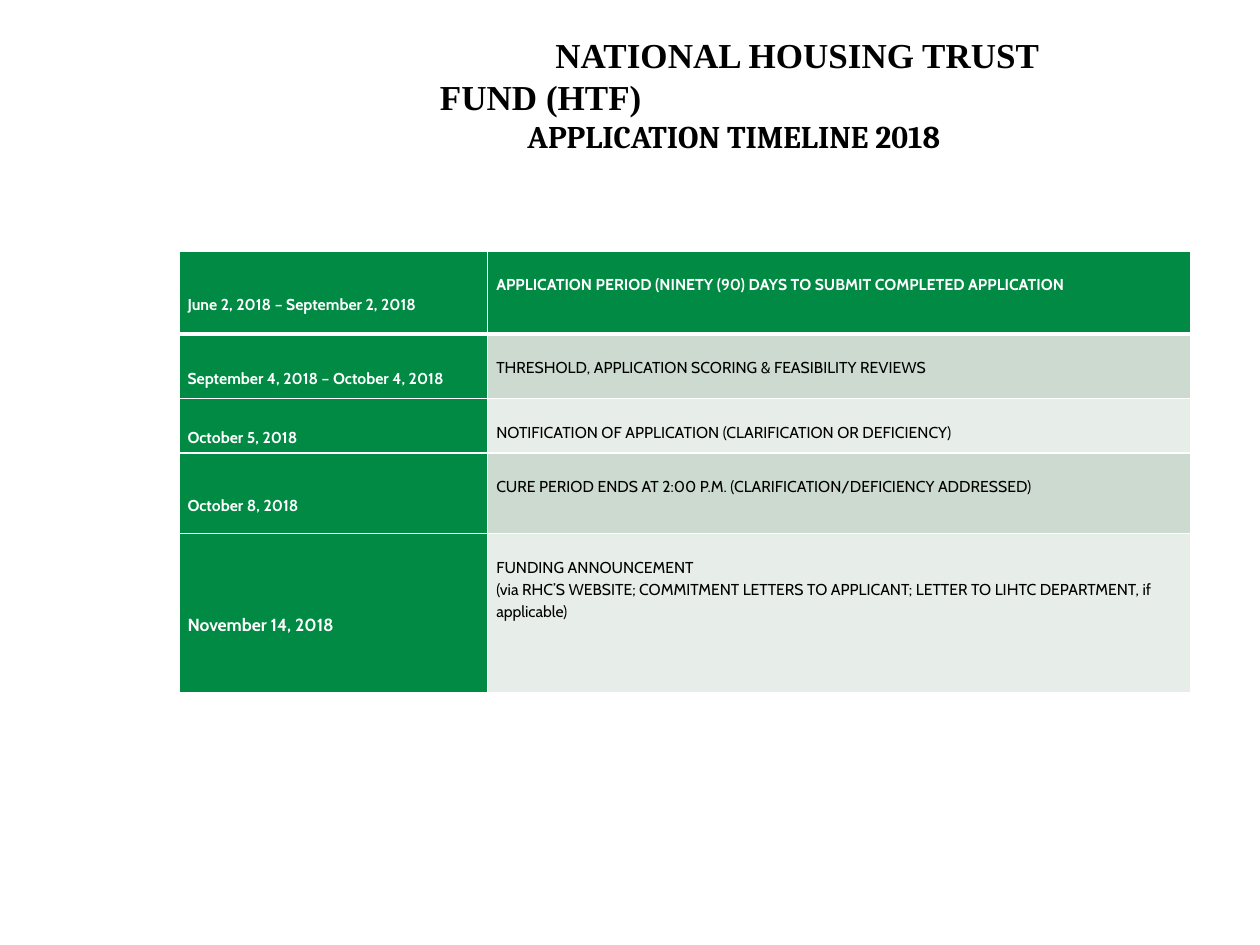
import pptx
import pptx.dml.color
import pptx.enum.text
import pptx.oxml
import pptx.oxml.ns
import pptx.util

Pt = pptx.util.Pt
RGBColor = pptx.dml.color.RGBColor
ALIGN = pptx.enum.text.PP_ALIGN
ANCHOR = pptx.enum.text.MSO_ANCHOR

GREEN = RGBColor(0x00, 0x8A, 0x43)
SAGE = RGBColor(0xCC, 0xDA, 0xCF)
MIST = RGBColor(0xE7, 0xED, 0xE9)
WHITE = RGBColor(0xFF, 0xFF, 0xFF)
BLACK = RGBColor(0x00, 0x00, 0x00)


def set_attributes(target, values):
    for name, value in values.items():
        setattr(target, name, value)


def add_border(cell, side, width):
    cell._tc.get_or_add_tcPr().append(pptx.oxml.parse_xml(
        f'<a:{side} {pptx.oxml.ns.nsdecls("a")} w="{Pt(width)}">'
        f'<a:solidFill><a:srgbClr val="{WHITE}"/></a:solidFill></a:{side}>'
    ))


presentation = pptx.Presentation()
set_attributes(presentation, {"slide_width": Pt(720), "slide_height": Pt(540)})
slide = presentation.slides.add_slide(presentation.slide_layouts[5])

title = slide.shapes.title
set_attributes(title, {"left": Pt(251.4), "top": Pt(19), "width": Pt(371.4), "height": Pt(68)})
set_attributes(title.text_frame, {
    "margin_left": 0, "margin_top": 0, "margin_right": 0, "margin_bottom": 0,
    "word_wrap": True,
    "auto_size": pptx.enum.text.MSO_AUTO_SIZE.NONE,
    "vertical_anchor": ANCHOR.TOP,
})
title_lines = [
    ("NATIONAL HOUSING TRUST FUND (HTF)", "Times New Roman", 20, 0, 66),
    ("APPLICATION TIMELINE 2018", "Cambria", 18, 50, 0),
]
title.text_frame.text = "\n".join(line[0] for line in title_lines)
for paragraph, (text, font_name, size, margin, indent) in zip(title.text_frame.paragraphs, title_lines):
    properties = paragraph._p.get_or_add_pPr()
    properties.set("marL", str(Pt(margin)))
    properties.set("indent", str(Pt(indent)))
    set_attributes(paragraph, {"alignment": ALIGN.LEFT, "space_before": Pt(0), "line_spacing": 1.0})
    set_attributes(paragraph.font, {"name": font_name, "size": Pt(size), "bold": True})
    paragraph.font.color.rgb = BLACK

timeline = [
    ("June 2, 2018 – September 2, 2018",
     "APPLICATION PERIOD (NINETY (90) DAYS TO SUBMIT COMPLETED APPLICATION", 47.5, 9),
    ("September 4, 2018 – October 4, 2018",
     "THRESHOLD, APPLICATION SCORING & FEASIBILITY REVIEWS", 37, 9),
    ("October 5, 2018",
     "NOTIFICATION OF APPLICATION (CLARIFICATION OR DEFICIENCY)", 31, 9),
    ("October 8, 2018",
     "CURE PERIOD ENDS AT 2:00 P.M. (CLARIFICATION/DEFICIENCY ADDRESSED)", 46, 9),
    ("November 14, 2018",
     "FUNDING ANNOUNCEMENT\n(via RHC’S WEBSITE; COMMITMENT LETTERS TO APPLICANT; "
     "LETTER TO LIHTC DEPARTMENT, if applicable)", 91, 10),
]
column_widths = [176.4, 401.8]
table = slide.shapes.add_table(
    len(timeline), len(column_widths), Pt(102.2), Pt(143.3),
    Pt(sum(column_widths)), Pt(sum(row[2] for row in timeline)),
).table
for column, width in zip(table.columns, column_widths):
    column.width = Pt(width)

for row_index, (date, step, height, date_size) in enumerate(timeline):
    table.rows[row_index].height = Pt(height)
    for column_index, text in enumerate((date, step)):
        is_date = column_index == 0
        is_green = is_date or row_index == 0
        cell = table.cell(row_index, column_index)
        cell.text = text
        set_attributes(cell, {
            "margin_left": Pt(5), "margin_right": Pt(5),
            "margin_top": Pt(12.6), "margin_bottom": 0,
            "vertical_anchor": ANCHOR.MIDDLE if is_date else ANCHOR.TOP,
        })
        border_widths = {
            "lnL": 1, "lnR": 1,
            "lnT": 3 if row_index == 1 else 1,
            "lnB": 3 if row_index == 0 else 1,
        }
        for side, width in border_widths.items():
            add_border(cell, side, width)
        cell.fill.solid()
        cell.fill.fore_color.rgb = GREEN if is_green else SAGE if row_index % 2 else MIST
        for paragraph in cell.text_frame.paragraphs:
            paragraph.line_spacing = 1.15
            set_attributes(paragraph.font, {
                "name": "Cabin", "size": Pt(date_size if is_date else 9), "bold": is_green,
            })
            paragraph.font.color.rgb = WHITE if is_green else BLACK

presentation.save("out.pptx")
